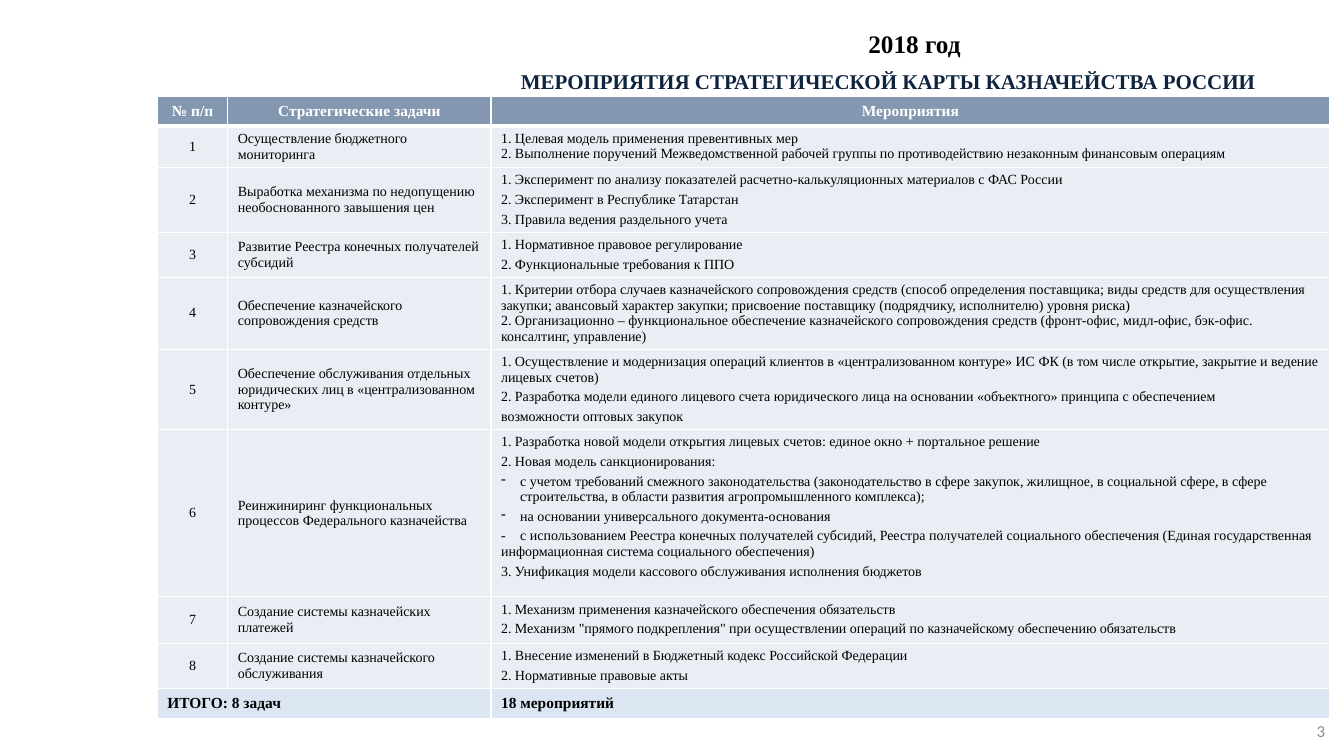
from lxml.etree import SubElement
from pptx import Presentation
from pptx.dml.color import RGBColor
from pptx.enum.text import MSO_ANCHOR, PP_ALIGN
from pptx.oxml import parse_xml
from pptx.oxml.ns import nsdecls, qn
from pptx.util import Inches, Pt

COLORS = {
    "white": "FFFFFF", "black": "000000", "navy": "0F243E", "gray": "8C8C8C",
    "header": "8497B0", "body": "E9EDF4", "total": "DCE6F2",
}
COLUMN_WIDTHS = [0.7, 2.61, 8.32]
ROW_HEIGHTS = [0.29, 0.41, 0.63, 0.42, 0.69, 0.78, 1.66, 0.46, 0.4, 0.3]
HEADINGS = ["№ п/п", "Стратегические задачи", "Мероприятия"]
TOTALS = ["ИТОГО: 8 задач", "", "18 мероприятий"]
HANG = 0.19
BULLET = "• "  # marks an item set with a hanging dash
TIGHT_TASKS = {1, 4}  # tasks whose measures follow without a gap

TASKS = [
    ("Осуществление бюджетного мониторинга", [
        "1. Целевая модель применения превентивных мер",
        "2. Выполнение поручений Межведомственной рабочей группы по противодействию "
        "незаконным финансовым операциям"]),
    ("Выработка механизма по недопущению необоснованного завышения цен", [
        "1. Эксперимент по анализу показателей расчетно-калькуляционных материалов с ФАС России",
        "2. Эксперимент в Республике Татарстан",
        "3. Правила ведения раздельного учета"]),
    ("Развитие Реестра конечных получателей субсидий", [
        "1. Нормативное правовое регулирование",
        "2. Функциональные требования к ППО"]),
    ("Обеспечение казначейского сопровождения средств", [
        "1. Критерии отбора случаев казначейского сопровождения средств (способ определения "
        "поставщика; виды средств для осуществления закупки; авансовый характер закупки; "
        "присвоение поставщику (подрядчику, исполнителю) уровня риска)",
        "2. Организационно – функциональное обеспечение казначейского сопровождения средств "
        "(фронт-офис, мидл-офис, бэк-офис. консалтинг, управление)"]),
    ("Обеспечение обслуживания отдельных юридических лиц в «централизованном контуре»", [
        "1. Осуществление и модернизация операций клиентов в «централизованном контуре» ИС ФК "
        "(в том числе открытие, закрытие и ведение лицевых счетов)",
        "2. Разработка модели единого лицевого счета юридического лица на основании "
        "«объектного» принципа с обеспечением",
        "возможности оптовых закупок"]),
    ("Реинжиниринг функциональных процессов Федерального казначейства", [
        "1. Разработка новой модели открытия лицевых счетов: единое окно + портальное решение",
        "2. Новая модель санкционирования:",
        BULLET + "с учетом требований смежного законодательства (законодательство в сфере "
        "закупок, жилищное, в социальной сфере, в сфере строительства, в области развития "
        "агропромышленного комплекса);",
        BULLET + "на основании универсального документа-основания",
        "-\tс использованием Реестра конечных получателей субсидий, Реестра получателей "
        "социального обеспечения (Единая государственная информационная система социального "
        "обеспечения)",
        "3. Унификация модели кассового обслуживания исполнения бюджетов"]),
    ("Создание системы казначейских платежей", [
        "1. Механизм применения казначейского обеспечения обязательств",
        "2. Механизм \"прямого подкрепления\" при осуществлении операций по казначейскому "
        "обеспечению обязательств"]),
    ("Создание системы казначейского обслуживания", [
        "1. Внесение изменений в Бюджетный кодекс Российской Федерации",
        "2. Нормативные правовые акты"]),
]


class SlideBuilder:
    font = "Times New Roman"

    def __init__(self, slide):
        self.slide = slide

    def set_lines(self, frame, lines, size, color="black", bold=False,
                  align=PP_ALIGN.LEFT, gap=0, font=None):
        for index, line in enumerate(lines):
            paragraph = frame.paragraphs[0] if index == 0 else frame.add_paragraph()
            paragraph.text = line.removeprefix(BULLET)
            paragraph.alignment = align
            paragraph.space_after = Pt(gap)
            if line.startswith(BULLET):
                self.hang_dash(paragraph)
            elif "\t" in line:
                self.set_tab(paragraph)
            for run in paragraph.runs:
                run.font.name = font or self.font
                run.font.size = Pt(size)
                run.font.bold = bold
                run.font.color.rgb = RGBColor.from_string(COLORS[color])

    def hang_dash(self, paragraph):
        properties = paragraph._p.get_or_add_pPr()
        properties.set("marL", str(Inches(HANG)))
        properties.set("indent", str(-Inches(HANG)))
        SubElement(properties, qn("a:buChar"), char="-")

    def set_tab(self, paragraph):
        stops = SubElement(paragraph._p.get_or_add_pPr(), qn("a:tabLst"))
        SubElement(stops, qn("a:tab"), pos=str(Inches(HANG)), algn="l")

    def text(self, line, left, top, width, height, size, wrap=True,
             anchor=MSO_ANCHOR.TOP, inset=(0.1, 0.05), **style):
        box = self.slide.shapes.add_textbox(
            Inches(left), Inches(top), Inches(width), Inches(height))
        frame = box.text_frame
        frame.word_wrap = wrap
        frame.vertical_anchor = anchor
        frame.margin_left = frame.margin_right = Inches(inset[0])
        frame.margin_top = frame.margin_bottom = Inches(inset[1])
        self.set_lines(frame, [line], size, **style)

    def table(self, left, top, widths, heights):
        grid = self.slide.shapes.add_table(
            len(heights), len(widths), Inches(left), Inches(top),
            Inches(sum(widths)), Inches(sum(heights))).table
        grid.first_row = grid.horz_banding = False
        for column, width in zip(grid.columns, widths):
            column.width = Inches(width)
        for row, height in zip(grid.rows, heights):
            row.height = Inches(height)
        return grid

    def cell(self, cell, lines, size, fill, anchor=MSO_ANCHOR.MIDDLE,
             top_line=1, bottom_line=1, **style):
        cell.vertical_anchor = anchor
        cell.fill.solid()
        cell.fill.fore_color.rgb = RGBColor.from_string(COLORS[fill])
        sides = {"L": 1, "R": 1, "T": top_line, "B": bottom_line}
        for index, (side, width) in enumerate(sides.items()):
            cell._tc.get_or_add_tcPr().insert(index, parse_xml(
                f'<a:ln{side} {nsdecls("a")} w="{Pt(width)}"><a:solidFill>'
                f'<a:srgbClr val="{COLORS["white"]}"/></a:solidFill></a:ln{side}>'))
        self.set_lines(cell.text_frame, lines, size, **style)


def main():
    presentation = Presentation()
    presentation.slide_width = Inches(13.33)
    presentation.slide_height = Inches(7.5)
    builder = SlideBuilder(presentation.slides.add_slide(presentation.slide_layouts[6]))

    plan = builder.table(1.56, 0.96, COLUMN_WIDTHS, ROW_HEIGHTS)
    for column, heading in enumerate(HEADINGS):
        builder.cell(plan.cell(0, column), [heading], 11, "header", bottom_line=3,
                     color="white", bold=True, align=PP_ALIGN.CENTER)
    for number, (task, measures) in enumerate(TASKS, start=1):
        top_line = 3 if number == 1 else 1
        gap = 0 if number in TIGHT_TASKS else 3
        builder.cell(plan.cell(number, 0), [str(number)], 10, "body",
                     top_line=top_line, align=PP_ALIGN.CENTER)
        builder.cell(plan.cell(number, 1), [task], 10, "body", top_line=top_line)
        builder.cell(plan.cell(number, 2), measures, 10, "body",
                     anchor=MSO_ANCHOR.TOP, top_line=top_line, gap=gap)
    total_row = len(TASKS) + 1
    for column, total in enumerate(TOTALS):
        builder.cell(plan.cell(total_row, column), [total], 11, "total", bold=True)
    plan.cell(total_row, 0).merge(plan.cell(total_row, 1))

    builder.text("3", 12.96, 7.1, 0.28, 0.29, 12, anchor=MSO_ANCHOR.MIDDLE,
                 color="gray", align=PP_ALIGN.RIGHT, font="Calibri")
    builder.text("МЕРОПРИЯТИЯ СТРАТЕГИЧЕСКОЙ КАРТЫ КАЗНАЧЕЙСТВА РОССИИ",
                 4.43, 0.64, 8.76, 0.34, 15, inset=(0.09, 0.04),
                 color="navy", bold=True, align=PP_ALIGN.CENTER)
    builder.text("2018 год", 8.51, 0.23, 1.12, 0.4, 18, wrap=False,
                 bold=True, align=PP_ALIGN.CENTER)
    presentation.save("out.pptx")


if __name__ == "__main__":
    main()
